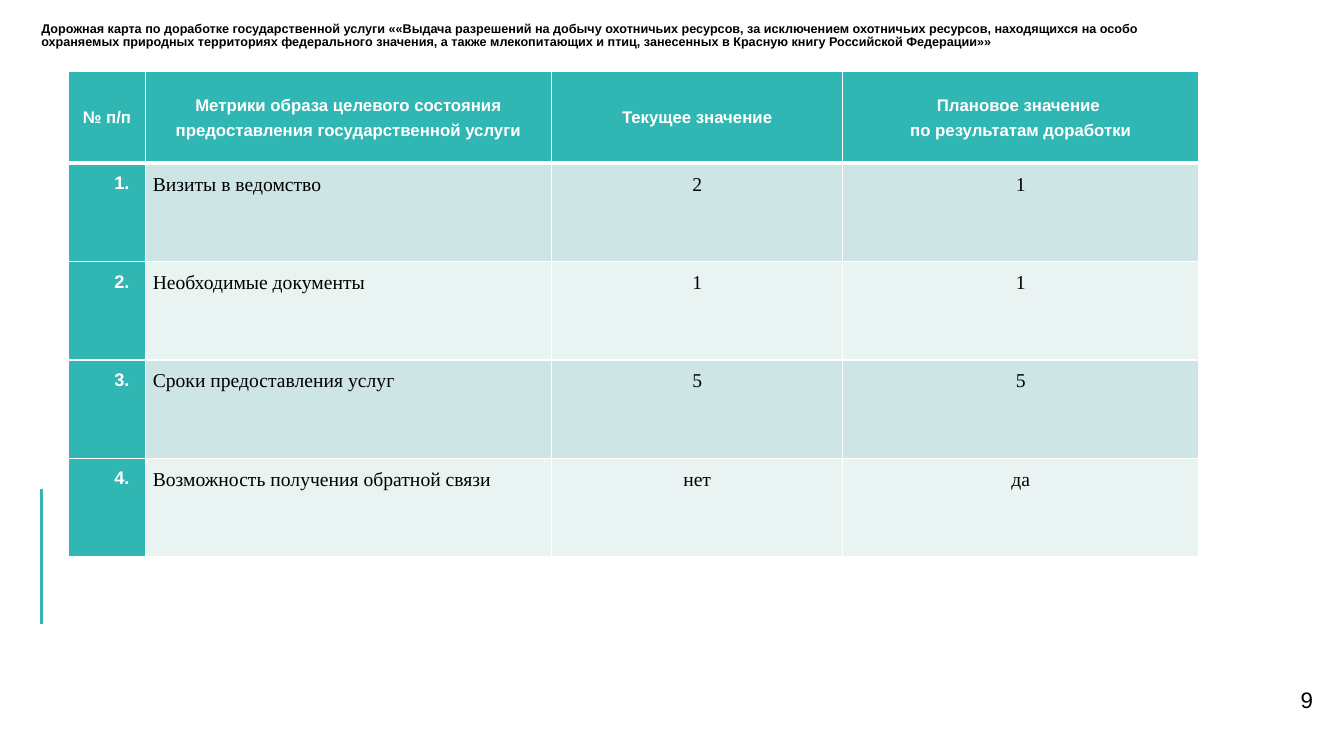
from lxml.etree import SubElement
from pptx import Presentation
from pptx.dml.color import RGBColor
from pptx.enum.shapes import MSO_CONNECTOR
from pptx.enum.text import MSO_ANCHOR, MSO_AUTO_SIZE, PP_ALIGN
from pptx.oxml.ns import qn
from pptx.util import Cm, Pt

TEAL = "30B6B3"
WHITE = "FFFFFF"
BLACK = "000000"
BANDS = ["CDE5E5", "E8F3F2"]
COLUMN_WIDTHS = [1.93, 10.24, 7.34, 8.97]
HEADER_HEIGHT = 2.31
ROW_HEIGHT = 2.48

TITLE = (
    "Дорожная карта по доработке государственной услуги ««Выдача разрешений на добычу "
    "охотничьих ресурсов, за исключением охотничьих ресурсов, находящихся на особо "
    "охраняемых природных территориях федерального значения, а также млекопитающих и птиц, "
    "занесенных в Красную книгу Российской Федерации»»"
)
HEADERS = [
    "№ п/п",
    "Метрики образа целевого состояния предоставления государственной услуги",
    "Текущее значение",
    "Плановое значение \vпо результатам доработки",
]
METRICS = [
    ("Визиты в ведомство", "2", "1"),
    ("Необходимые документы", "1", "1"),
    ("Сроки предоставления услуг", "5", "5"),
    ("Возможность получения обратной связи", "нет", "да"),
]


def rgb(value):
    return RGBColor.from_string(value)


class RoadmapSlide:
    heading_font = "Arial"
    body_font = "Times New Roman"

    def __init__(self, deck):
        self.slide = deck.slides.add_slide(deck.slide_layouts[5])

    def fill_text(self, frame, text, size, color=BLACK, font=heading_font, bold=False,
                  align=PP_ALIGN.LEFT, spacing=1.0):
        frame.text = text
        frame.word_wrap = True
        paragraph = frame.paragraphs[0]
        paragraph.alignment = align
        paragraph.line_spacing = spacing
        paragraph.space_before = Pt(0)
        for run in paragraph.runs:
            run.font.name = font
            run.font.size = Pt(size)
            run.font.bold = bold
            run.font.color.rgb = rgb(color)
        for line_break in paragraph._p.findall(qn("a:br")):
            SubElement(line_break, qn("a:rPr"), sz=str(size * 100))
        return paragraph

    def place(self, shape, left, top, width, height, anchor):
        shape.left, shape.top = Cm(left), Cm(top)
        shape.width, shape.height = Cm(width), Cm(height)
        frame = shape.text_frame
        frame.margin_left = frame.margin_right = frame.margin_top = frame.margin_bottom = 0
        frame.auto_size = MSO_AUTO_SIZE.NONE
        frame.vertical_anchor = anchor
        return frame

    def title(self, text):
        frame = self.place(self.slide.shapes.title, 1.04, 0.56, 28.07, 0.99, MSO_ANCHOR.TOP)
        self.fill_text(frame, text, 9, bold=True, spacing=0.9)

    def page_number(self, text):
        box = self.slide.shapes.add_textbox(0, 0, 0, 0)
        frame = self.place(box, 30.4, 17.08, 2.69, 1.09, MSO_ANCHOR.MIDDLE)
        self.fill_text(frame, text, 16, align=PP_ALIGN.RIGHT)

    def accent_line(self, left, top, bottom):
        accent = self.slide.shapes.add_connector(
            MSO_CONNECTOR.STRAIGHT, Cm(left), Cm(top), Cm(left), Cm(bottom))
        accent.line.color.rgb = rgb(TEAL)
        accent.line.width = Pt(2.25)
        SubElement(accent._element.spPr, qn("a:effectLst"))

    def style_cell(self, cell, fill, borders):
        cell.margin_left = cell.margin_right = Cm(0.19)
        cell.margin_top = Cm(0.1)
        cell.margin_bottom = Cm(0.2)
        properties = cell._tc.get_or_add_tcPr()
        for side, width in borders.items():
            border = SubElement(properties, qn(f"a:ln{side}"), w=str(Pt(width)))
            paint = SubElement(border, qn("a:solidFill"))
            SubElement(paint, qn("a:srgbClr"), val=WHITE)
        cell.fill.solid()
        cell.fill.fore_color.rgb = rgb(fill)

    def metrics_table(self, left, top, headers, metrics):
        table = self.slide.shapes.add_table(
            len(metrics) + 1, len(headers), Cm(left), Cm(top), Cm(sum(COLUMN_WIDTHS)),
            Cm(HEADER_HEIGHT + ROW_HEIGHT * len(metrics))).table
        for column, width in zip(table.columns, COLUMN_WIDTHS):
            column.width = Cm(width)
        for row in table.rows:
            row.height = Cm(ROW_HEIGHT)
        table.rows[0].height = Cm(HEADER_HEIGHT)

        for column, header in enumerate(headers):
            cell = table.cell(0, column)
            self.style_cell(cell, TEAL, {"L": 1, "R": 1, "T": 1, "B": 3})
            cell.vertical_anchor = MSO_ANCHOR.MIDDLE
            self.fill_text(cell.text_frame, header, 12, WHITE, bold=True,
                           align=PP_ALIGN.CENTER, spacing=1.3)

        for number, metric in enumerate(metrics, 1):
            borders = {"L": 1, "R": 1, "T": 3 if number == 1 else 1, "B": 1}
            number_cell = table.cell(number, 0)
            self.style_cell(number_cell, TEAL, borders)
            label = self.fill_text(number_cell.text_frame, f"{number}.", 13, WHITE,
                                   bold=True, align=PP_ALIGN.JUSTIFY, spacing=1.3)
            label._p.get_or_add_pPr().set("marL", str(Cm(0.96)))
            label._p.get_or_add_pPr().set("indent", "0")
            for column, value in enumerate(metric, 1):
                cell = table.cell(number, column)
                self.style_cell(cell, BANDS[(number - 1) % 2], borders)
                align = PP_ALIGN.JUSTIFY if column == 1 else PP_ALIGN.CENTER
                self.fill_text(cell.text_frame, value, 14, font=self.body_font,
                               align=align, spacing=1.3)


def main():
    deck = Presentation()
    deck.slide_width, deck.slide_height = Cm(33.87), Cm(19.05)
    roadmap = RoadmapSlide(deck)
    roadmap.title(TITLE)
    roadmap.page_number("9")
    roadmap.accent_line(1.04, 12.32, 15.72)
    roadmap.metrics_table(1.73, 1.8, HEADERS, METRICS)
    deck.save("out.pptx")


if __name__ == "__main__":
    main()
